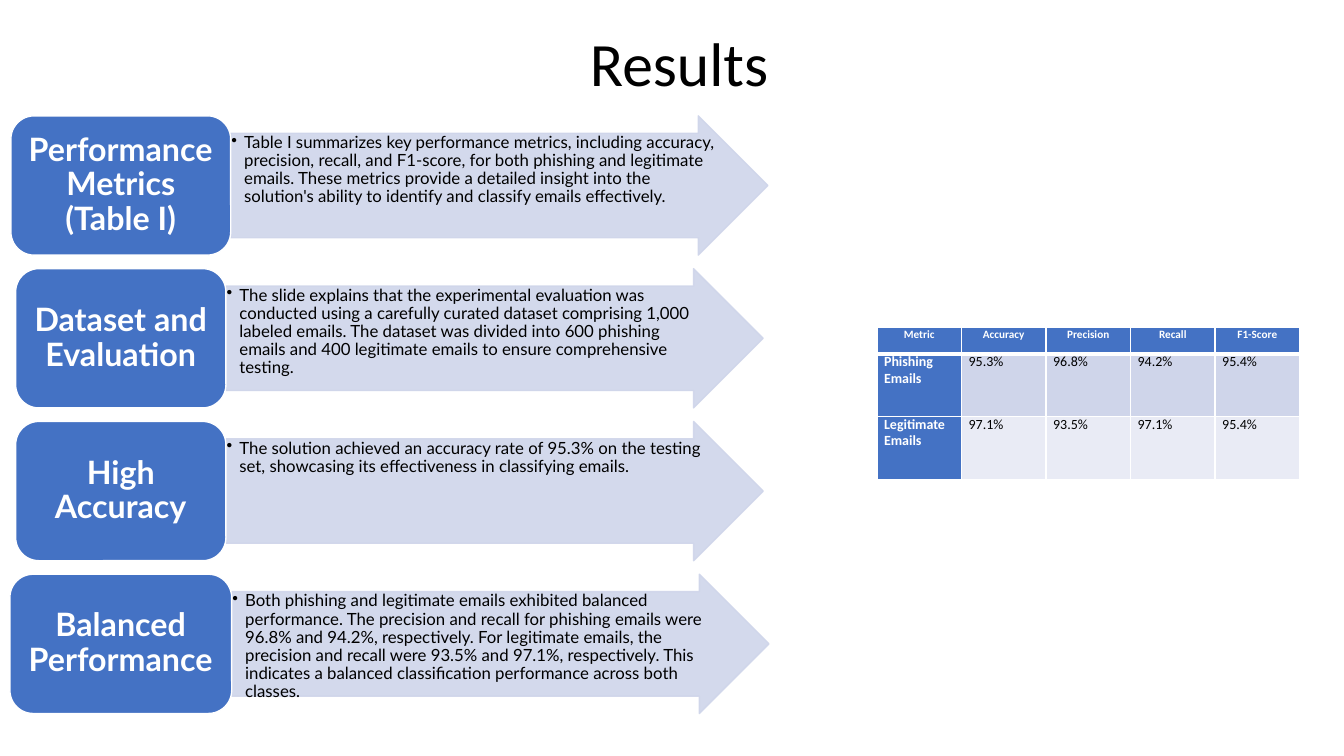
import dataclasses

import lxml.etree
import pptx
import pptx.dml.color
import pptx.enum.shapes
import pptx.enum.text
import pptx.oxml.ns
import pptx.util

Cm = pptx.util.Cm
Pt = pptx.util.Pt
Align = pptx.enum.text.PP_ALIGN
Anchor = pptx.enum.text.MSO_ANCHOR
Shape = pptx.enum.shapes.MSO_SHAPE

TITLE = "Results"

# Label, label width in cm, detail
POINTS = [
    ("Performance Metrics (Table I)", 5.54,
     "Table I summarizes key performance metrics, including accuracy, precision, "
     "recall, and F1-score, for both phishing and legitimate emails. These metrics "
     "provide a detailed insight into the solution's ability to identify and "
     "classify emails effectively."),
    ("Dataset and Evaluation", 5.3,
     "The slide explains that the experimental evaluation was conducted using a "
     "carefully curated dataset comprising 1,000 labeled emails. The dataset was "
     "divided into 600 phishing emails and 400 legitimate emails to ensure "
     "comprehensive testing."),
    ("High Accuracy", 5.3,
     "The solution achieved an accuracy rate of 95.3% on the testing set, "
     "showcasing its effectiveness in classifying emails."),
    ("Balanced Performance", 5.59,
     "Both phishing and legitimate emails exhibited balanced performance. The "
     "precision and recall for phishing emails were 96.8% and 94.2%, respectively. "
     "For legitimate emails, the precision and recall were 93.5% and 97.1%, "
     "respectively. This indicates a balanced classification performance across "
     "both classes."),
]

SCORES = [
    ("Metric", "Accuracy", "Precision", "Recall", "F1-Score"),
    ("Phishing Emails", "95.3%", "96.8%", "94.2%", "95.4%"),
    ("Legitimate Emails", "97.1%", "93.5%", "97.1%", "95.4%"),
]


@dataclasses.dataclass(frozen=True)
class Theme:
    blue: str = "4472C4"
    pale: str = "CFD5EA"
    light: str = "E9EBF5"
    white: str = "FFFFFF"
    black: str = "000000"
    plain: str = "Calibri"
    accent: str = "Lato"
    title: int = 44
    label: int = 23
    detail: int = 12
    cell: int = 10
    head: int = 8


THEME = Theme()

# Lengths in cm
TOP, PITCH, HEIGHT = 2.92, 3.85, 3.51
ARROW, SPAN = 13.54, 19.63
COLUMN, ROWS = 2.13, (0.66, 1.58, 1.58)


def put(item, **values):
    for name, value in values.items():
        setattr(item, name, value)


def hue(code):
    return pptx.dml.color.RGBColor.from_string(code)


def paint(item, code):
    item.fill.solid()
    item.fill.fore_color.rgb = hue(code)


def pad(side, end):
    return dict(margin_left=Cm(side), margin_right=Cm(side),
                margin_top=Cm(end), margin_bottom=Cm(end))


def write(frame, text, size, face, code, bold=False, **layout):
    """Fill a text frame with one paragraph and return that paragraph."""
    para = frame.paragraphs[0]
    run = para.add_run()
    run.text = text
    put(run.font, size=Pt(size), name=face, bold=bold)
    run.font.color.rgb = hue(code)
    put(para, **layout)
    return para


def add_node(parent, tag, **values):
    return lxml.etree.SubElement(parent, pptx.oxml.ns.qn(tag), values)


def add_block(slide, kind, box, fill, edge):
    shape = slide.shapes.add_shape(kind, *map(Cm, box))
    shape.shadow.inherit = False
    paint(shape, fill)
    shape.line.color.rgb = hue(edge)
    shape.line.width = Pt(1)
    shape.text_frame.word_wrap = True
    return shape


def add_point(slide, index, label, width, detail):
    top = TOP + index * PITCH
    left = (SPAN - width - ARROW) / 2

    arrow = add_block(slide, Shape.RIGHT_ARROW, (left + width, top, ARROW, HEIGHT),
                      THEME.pale, THEME.pale)
    arrow.adjustments[0] = 0.75
    arrow.adjustments[1] = 0.5
    for tint in arrow._element.spPr.iter(pptx.oxml.ns.qn("a:srgbClr")):
        add_node(tint, "a:alpha", val="90000")
    put(arrow.text_frame, vertical_anchor=Anchor.TOP, **pad(0.02, 0.02))
    para = write(arrow.text_frame, detail, THEME.detail, THEME.accent, THEME.black,
                 alignment=Align.LEFT, line_spacing=0.9, level=1)
    props = para._p.get_or_add_pPr()
    props.set("marL", str(Cm(0.32)))
    props.set("indent", str(-Cm(0.32)))
    add_node(props, "a:buChar", char="•")

    block = add_block(slide, Shape.ROUNDED_RECTANGLE, (left, top, width, HEIGHT),
                      THEME.blue, THEME.white)
    put(block.text_frame, vertical_anchor=Anchor.MIDDLE, **pad(0.25, 0.13))
    write(block.text_frame, label, THEME.label, THEME.accent, THEME.white, True,
          alignment=Align.CENTER, line_spacing=0.9)


def add_edges(cell, head):
    props = cell._tc.get_or_add_tcPr()
    for place, side in enumerate("LRTB"):
        width = Pt(3 if head and side == "B" else 1)
        edge = lxml.etree.Element(pptx.oxml.ns.qn(f"a:ln{side}"), w=str(width))
        add_node(add_node(edge, "a:solidFill"), "a:srgbClr", val=THEME.white)
        props.insert(place, edge)


def add_scores(slide):
    count = len(SCORES[0])
    frame = slide.shapes.add_table(len(SCORES), count, Cm(22.1), Cm(8.26),
                                   Cm(count * COLUMN), Cm(sum(ROWS)))
    table = frame.table
    for column in table.columns:
        column.width = Cm(COLUMN)
    bands = (THEME.blue, THEME.pale, THEME.light)
    head = dict(alignment=Align.CENTER)
    body = dict(alignment=Align.JUSTIFY, line_spacing=0.95, space_after=Pt(6))
    for r, values in enumerate(SCORES):
        table.rows[r].height = Cm(ROWS[r])
        for c, text in enumerate(values):
            cell = table.cell(r, c)
            strong = r == 0 or c == 0
            put(cell, vertical_anchor=Anchor.TOP, **pad(0.18, 0))
            paint(cell, THEME.blue if strong else bands[r])
            write(cell.text_frame, text, THEME.cell if r else THEME.head, THEME.plain,
                  THEME.white if strong else THEME.black, strong,
                  **(body if r else head))
            add_edges(cell, r == 0)


def main():
    deck = pptx.Presentation()
    put(deck, slide_width=Cm(33.87), slide_height=Cm(19.05))
    slide = deck.slides.add_slide(deck.slide_layouts[5])

    title = slide.shapes.title
    put(title, left=Cm(9.14), top=Cm(0.51), width=Cm(15.95), height=Cm(2.13))
    put(title.text_frame, word_wrap=True, vertical_anchor=Anchor.TOP,
        auto_size=pptx.enum.text.MSO_AUTO_SIZE.SHAPE_TO_FIT_TEXT)
    write(title.text_frame, TITLE, THEME.title, THEME.plain, THEME.black,
          alignment=Align.CENTER, space_before=Pt(4), space_after=Pt(10))

    add_scores(slide)
    for index, point in enumerate(POINTS):
        add_point(slide, index, *point)
    deck.save("out.pptx")


if __name__ == "__main__":
    main()
